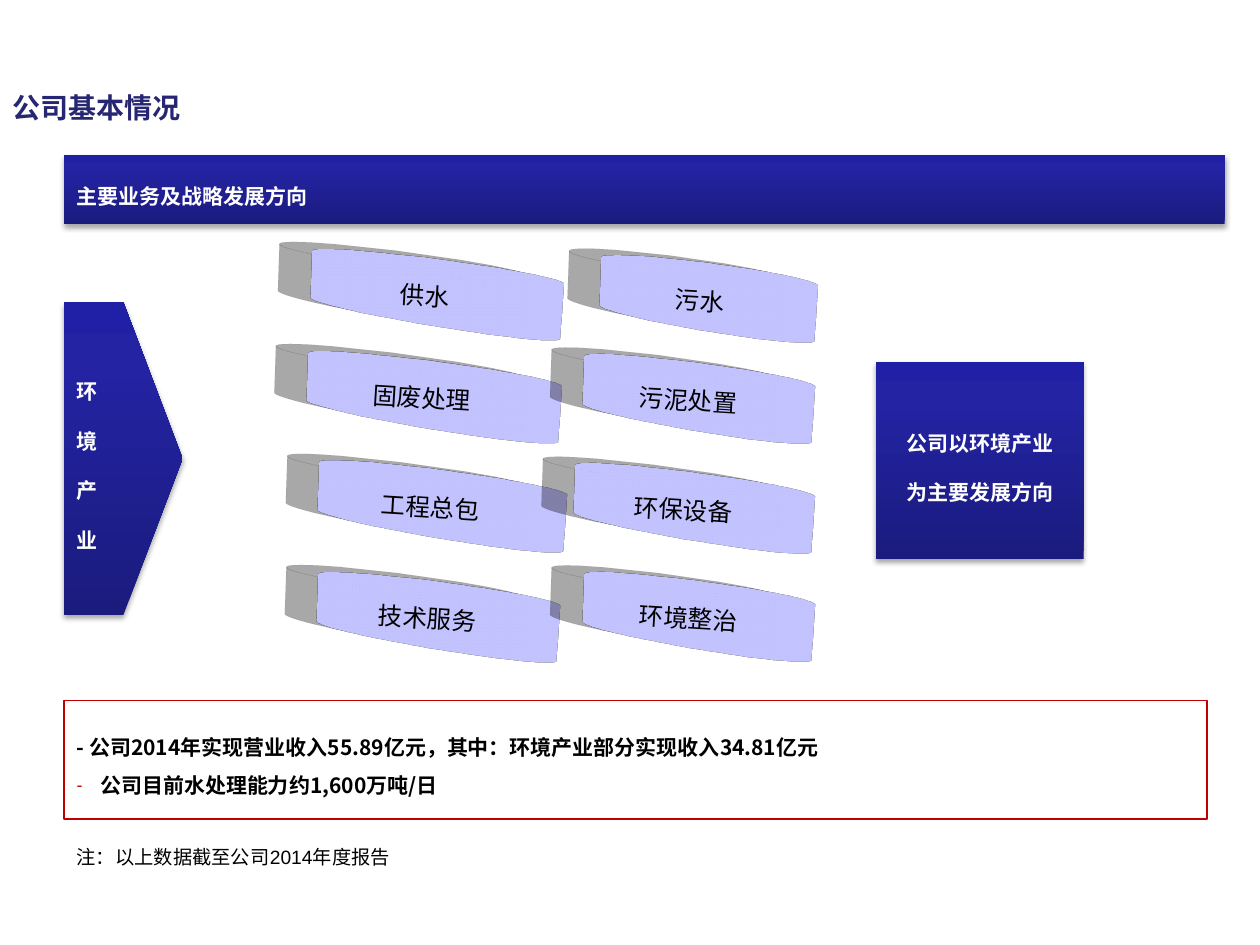
from dataclasses import dataclass

from lxml import etree
from pptx import Presentation
from pptx.dml.color import RGBColor
from pptx.enum import shapes, text
from pptx.oxml import ns
from pptx.util import Pt

A = ns.nsdecls("a")


@dataclass(frozen=True)
class Theme:
    sans: str = "Arial"
    cjk: str = "Noto Sans CJK SC"
    title: str = "262673"
    ink: str = "000000"
    white: str = "FFFFFF"
    can: str = "A3A3E0"
    frame: str = "C00000"
    bullet: str = "CC0000"
    gradient: tuple = ((0, "1B1B7E"), (80, "2323A3"), (100, "2020A6"))
    title_size: int = 16
    can_size: int = 14
    body_size: int = 12
    note_size: int = 11


THEME = Theme()
LEFT = 36.72
CAN_HEIGHT = 38.88
# label, left, top, width
CANS = [
    ("供水", 156.24, 146.88, 173.52),
    ("污水", 325.44, 149.76, 149.04),
    ("技术服务", 161.28, 331.2, 166.32),
    ("固废处理", 154.08, 205.2, 174.24),
    ("环境整治", 313.92, 331.2, 159.12),
    ("工程总包", 161.28, 267.84, 169.92),
    ("污泥处置", 313.92, 206.64, 159.12),
    ("环保设备", 308.16, 269.28, 164.88),
]


def add_xml(parent, xml):
    parent.append(etree.fromstring(xml))


def add_shadow(shape, alpha, blur, dist, angle):
    add_xml(shape._element.spPr, f'<a:effectLst {A}><a:outerShdw blurRad="{Pt(blur)}" '
            f'dist="{Pt(dist)}" dir="{angle * 60000}" algn="ctr" rotWithShape="0">'
            f'<a:srgbClr val="{THEME.ink}"><a:alpha val="{alpha * 1000}"/></a:srgbClr>'
            '</a:outerShdw></a:effectLst>')


def add_box(slide, preset, box):
    shape = slide.shapes.add_shape(preset, *map(Pt, box))
    shape.line.fill.background()
    return shape


def write(shape, lines, size, color, name, bold=False, wrap=True,
          anchor=text.MSO_ANCHOR.MIDDLE, **spacing):
    frame = shape.text_frame
    frame.text = "\n".join(lines)
    frame.word_wrap = wrap
    frame.vertical_anchor = anchor
    paragraph_format = {"alignment": text.PP_ALIGN.LEFT, **spacing}
    for index, paragraph in enumerate(frame.paragraphs):
        for key, value in paragraph_format.items():
            if index or key != "space_before":
                setattr(paragraph, key, value)
        for run in paragraph.runs:
            font = run.font
            for key, value in {"size": Pt(size), "bold": bold, "name": name}.items():
                setattr(font, key, value)
            font.color.rgb = RGBColor.from_string(color)
            add_xml(run._r.get_or_add_rPr(), f'<a:ea {A} typeface="{THEME.cjk}"/>')
    return frame


def add_title(slide, box):
    title = slide.shapes.title
    title.left, title.top, title.width, title.height = map(Pt, box)
    write(title, ["公司基本情况"], THEME.title_size, THEME.title, THEME.cjk, bold=True)


def add_can(slide, label, box):
    """A cylinder turned to the left, with a long shadow behind it."""
    can = add_box(slide, shapes.MSO_SHAPE.CAN, box)
    can.fill.solid()
    can.fill.fore_color.rgb = RGBColor.from_string(THEME.can)
    add_shadow(can, 18, 14.5, 19, 192)
    add_xml(can._element.spPr, f'<a:scene3d {A}><a:camera prst="perspectiveHeroicExtremeLeftFacing"/>'
            '<a:lightRig rig="threePt" dir="t"/></a:scene3d>')
    write(can, [label], THEME.can_size, THEME.ink, THEME.sans,
          alignment=text.PP_ALIGN.CENTER)


def add_panel(slide, preset, box, lines, name=THEME.sans, wrap=False, **spacing):
    """A dark blue gradient shape with bold white text."""
    panel = add_box(slide, preset, box)
    stops = "".join(f'<a:gs pos="{pos * 1000}"><a:srgbClr val="{color}"/></a:gs>'
                    for pos, color in THEME.gradient)
    panel._element.spPr.find(ns.qn("a:ln")).addprevious(etree.fromstring(
        f'<a:gradFill {A} rotWithShape="1"><a:gsLst>{stops}</a:gsLst>'
        '<a:lin ang="16200000" scaled="0"/></a:gradFill>'))
    add_shadow(panel, 35, 3.1, 1.8, 90)
    write(panel, lines, THEME.body_size, THEME.white, name, bold=True, wrap=wrap,
          line_spacing=1.55, space_before=Pt(6), **spacing)


def add_key_figures(slide, box):
    figures = add_box(slide, shapes.MSO_SHAPE.RECTANGLE, box)
    figures.shadow.inherit = False
    figures.fill.solid()
    figures.fill.fore_color.rgb = RGBColor.from_string(THEME.white)
    figures.line.color.rgb = RGBColor.from_string(THEME.frame)
    figures.line.width = Pt(1)
    frame = write(figures, ["- 公司2014年实现营业收入55.89亿元，其中：环境产业部分实现收入34.81亿元",
                            "公司目前水处理能力约1,600万吨/日"],
                  THEME.body_size, THEME.ink, THEME.cjk, bold=True, line_spacing=1.5)
    properties = frame.paragraphs[1]._p.get_or_add_pPr()
    properties.set("marL", str(Pt(13.5)))
    properties.set("indent", str(-Pt(13.5)))
    for bullet in (f'<a:buClr {A}><a:srgbClr val="{THEME.bullet}"/></a:buClr>',
                   f'<a:buSzPct {A} val="85000"/>',
                   f'<a:buFont {A} typeface="{THEME.sans}"/>',
                   f'<a:buChar {A} char="-"/>'):
        add_xml(properties, bullet)


def add_note(slide, box):
    note = slide.shapes.add_textbox(*map(Pt, box))
    write(note, ["注：以上数据截至公司2014年度报告"], THEME.note_size, THEME.ink,
          THEME.sans, anchor=text.MSO_ANCHOR.TOP)


def main():
    deck = Presentation()
    deck.slide_width, deck.slide_height = Pt(720), Pt(540)
    slide = deck.slides.add_slide(deck.slide_layouts[5])
    preset = shapes.MSO_SHAPE
    add_title(slide, (0, 48.24, 619.2, 26.64))
    for label, left, top, width in CANS:
        add_can(slide, label, (left, top, width, CAN_HEIGHT))
    add_panel(slide, preset.PENTAGON, (LEFT, 172.8, 67.68, 178.56), list("环境产业"),
              name=THEME.cjk, wrap=True)
    add_panel(slide, preset.RECTANGLE, (LEFT, 88.56, 663.12, 39.6), ["主要业务及战略发展方向"])
    add_key_figures(slide, (LEFT, 400.32, 653.04, 67.68))
    add_panel(slide, preset.RECTANGLE, (500.4, 206.64, 118.8, 113.04),
              ["公司以环境产业", "为主要发展方向"], alignment=text.PP_ALIGN.CENTER)
    add_note(slide, (LEFT, 479.52, 532.8, 20.88))
    deck.save("out.pptx")


if __name__ == "__main__":
    main()
